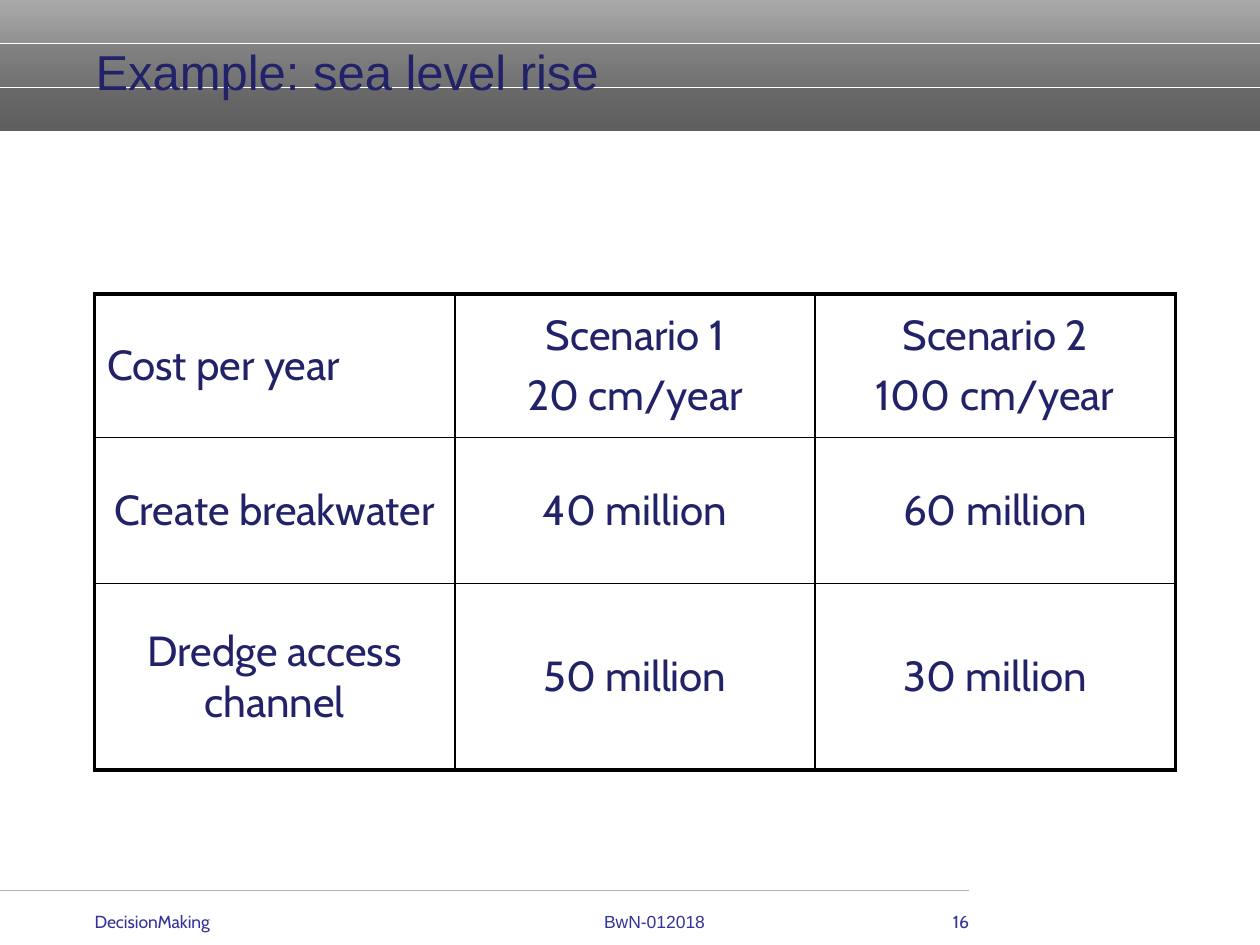
from dataclasses import dataclass

from lxml import etree
from pptx import Presentation
from pptx.dml.color import RGBColor
from pptx.enum.shapes import MSO_CONNECTOR, MSO_SHAPE
from pptx.enum.text import MSO_ANCHOR, MSO_AUTO_SIZE, PP_ALIGN
from pptx.oxml.ns import qn
from pptx.util import Pt

LEFT, CENTER, RIGHT = PP_ALIGN.LEFT, PP_ALIGN.CENTER, PP_ALIGN.RIGHT
TOP, MIDDLE = MSO_ANCHOR.TOP, MSO_ANCHOR.MIDDLE
RECTANGLE, STRAIGHT = MSO_SHAPE.RECTANGLE, MSO_CONNECTOR.STRAIGHT
NO_AUTOFIT = MSO_AUTO_SIZE.NONE


@dataclass(frozen=True)
class Theme:
    ink: str = "222268"
    footer: str = "333399"
    light_gray: str = "B2B2B2"
    dark_gray: str = "5F5F5F"
    white: str = "FFFFFF"
    border: str = "000000"
    heading_font: str = "Arial"
    body_font: str = "Cabin"
    title_size: float = 28
    table_size: float = 24
    footer_size: float = 10
    thin: float = 1
    thick: float = 2.25


@dataclass(frozen=True)
class Box:
    left: float
    top: float
    width: float
    height: float

    def lengths(self) -> tuple:
        return tuple(Pt(v) for v in (self.left, self.top, self.width, self.height))


@dataclass(frozen=True)
class FooterItem:
    text: str
    box: Box
    alignment: PP_ALIGN
    font: str


THEME = Theme()
SLIDE_WIDTH, SLIDE_HEIGHT = 720, 540
HEADER_HEIGHT = 75
STRIPE_HEIGHT = HEADER_HEIGHT / 3
STRIPE_OPACITIES = (10, 35, 60)
TITLE_BOX = Box(54.6, 18.7, 645, 48.2)
TABLE_BOX = Box(54, 167.9, 617.7, 272.2)
ROW_HEIGHTS = (82, 83.5, 106.7)
ROWS = (
    ("Cost per year", "Scenario 1\n20 cm/year", "Scenario 2\n100 cm/year"),
    ("Create breakwater", "40 million", "60 million"),
    ("Dredge access channel", "50 million", "30 million"),
)
FOOTER_RULE_TOP, FOOTER_RULE_WIDTH = 509, 553.7
FOOTER_TOP, FOOTER_HEIGHT = 520.6, 25.2
FOOTER_ITEMS = (
    FooterItem("16", Box(517, FOOTER_TOP, 36.7, FOOTER_HEIGHT), RIGHT, THEME.body_font),
    FooterItem("DecisionMaking", Box(54, FOOTER_TOP, 192, FOOTER_HEIGHT), LEFT, THEME.body_font),
    FooterItem("BwN-012018", Box(317.5, FOOTER_TOP, 113, FOOTER_HEIGHT), CENTER, THEME.heading_font),
)


def rgb(color: str) -> RGBColor:
    return RGBColor.from_string(color)


def set_attributes(target, values: dict) -> None:
    for name, value in values.items():
        setattr(target, name, value)


def style_font(font, name: str, size: float, color: str) -> None:
    set_attributes(font, {"name": name, "size": Pt(size), "bold": False})
    font.color.rgb = rgb(color)


def style_frame(frame, anchor: MSO_ANCHOR, vertical_inset: float = 0) -> None:
    set_attributes(frame, {
        "word_wrap": True, "auto_size": NO_AUTOFIT, "vertical_anchor": anchor,
        "margin_left": 0, "margin_right": 0,
        "margin_top": Pt(vertical_inset), "margin_bottom": Pt(vertical_inset),
    })


def add_rectangle(slide, box: Box):
    shape = slide.shapes.add_shape(RECTANGLE, *box.lengths())
    shape.shadow.inherit = False
    shape.line.fill.background()
    return shape


def add_rule(slide, top: float, width: float, color: str) -> None:
    rule = slide.shapes.add_connector(STRAIGHT, 0, Pt(top), Pt(width), Pt(top))
    rule.line.color.rgb = rgb(color)
    rule.line.width = Pt(0.75)
    etree.SubElement(rule.element.spPr, qn("a:effectLst"))


def add_header(slide) -> None:
    """Draw the gradient band, its translucent stripes and the white rules."""
    fill = add_rectangle(slide, Box(0, 0, SLIDE_WIDTH, HEADER_HEIGHT)).fill
    fill.gradient()
    fill.gradient_angle = 270
    for stop, position, color in zip(fill.gradient_stops, (0, 1), (THEME.light_gray, THEME.dark_gray)):
        stop.position = position
        stop.color.rgb = rgb(color)
    for index, opacity in enumerate(STRIPE_OPACITIES):
        stripe = add_rectangle(slide, Box(0, index * STRIPE_HEIGHT, SLIDE_WIDTH, STRIPE_HEIGHT))
        stripe.fill.solid()
        stripe.fill.fore_color.rgb = rgb(THEME.dark_gray)
        color_element = stripe.element.spPr.find(f"{qn('a:solidFill')}/{qn('a:srgbClr')}")
        etree.SubElement(color_element, qn("a:alpha"), val=str(opacity * 1000))
    for index in range(1, len(STRIPE_OPACITIES) + 1):
        add_rule(slide, index * STRIPE_HEIGHT, SLIDE_WIDTH, THEME.white)


def add_title(slide, text: str) -> None:
    title = slide.shapes.title
    set_attributes(title, dict(zip(("left", "top", "width", "height"), TITLE_BOX.lengths())))
    title.element.getparent().append(title.element)  # in front of the header
    style_frame(title.text_frame, MIDDLE, 3.6)
    title.text_frame.text = text
    paragraph = title.text_frame.paragraphs[0]
    set_attributes(paragraph, {"alignment": LEFT, "line_spacing": 0.9})
    style_font(paragraph.font, THEME.heading_font, THEME.title_size, THEME.ink)


def set_borders(cell, widths: dict) -> None:
    properties = cell._tc.get_or_add_tcPr()
    for index, (side, width) in enumerate(widths.items()):
        line = etree.Element(qn(f"a:ln{side}"), w=str(Pt(width)))
        solid = etree.SubElement(line, qn("a:solidFill"))
        etree.SubElement(solid, qn("a:srgbClr"), val=THEME.border)
        properties.insert(index, line)


def add_cost_table(slide) -> None:
    last_row, last_column = len(ROWS) - 1, len(ROWS[0]) - 1
    table = slide.shapes.add_table(len(ROWS), len(ROWS[0]), *TABLE_BOX.lengths()).table
    set_attributes(table, {"first_row": False, "horz_banding": False})
    for column in table.columns:
        column.width = Pt(TABLE_BOX.width / len(ROWS[0]))
    for row_index, (texts, height) in enumerate(zip(ROWS, ROW_HEIGHTS)):
        table.rows[row_index].height = Pt(height)
        for column_index, text in enumerate(texts):
            cell = table.cell(row_index, column_index)
            set_attributes(cell, {"text": text, "vertical_anchor": MIDDLE})
            cell.fill.background()
            outer_sides = {"L": column_index == 0, "R": column_index == last_column,
                           "T": row_index == 0, "B": row_index == last_row}
            set_borders(cell, {side: THEME.thick if outer else THEME.thin
                               for side, outer in outer_sides.items()})
            is_corner = row_index == column_index == 0
            for index, paragraph in enumerate(cell.text_frame.paragraphs):
                paragraph.alignment = LEFT if is_corner else CENTER
                paragraph.space_before = Pt(0.2 * THEME.table_size if index else 0)
                style_font(paragraph.font, THEME.body_font, THEME.table_size, THEME.ink)


def add_footer_item(slide, item: FooterItem) -> None:
    frame = slide.shapes.add_textbox(*item.box.lengths()).text_frame
    style_frame(frame, TOP)
    frame.text = item.text
    paragraph = frame.paragraphs[0]
    paragraph.alignment = item.alignment
    style_font(paragraph.font, item.font, THEME.footer_size, THEME.footer)


def main() -> None:
    presentation = Presentation()
    set_attributes(presentation, {"slide_width": Pt(SLIDE_WIDTH), "slide_height": Pt(SLIDE_HEIGHT)})
    slide = presentation.slides.add_slide(presentation.slide_layouts.get_by_name("Title Only"))
    add_header(slide)
    add_rule(slide, FOOTER_RULE_TOP, FOOTER_RULE_WIDTH, THEME.light_gray)
    add_title(slide, "Example: sea level rise")
    add_cost_table(slide)
    for item in FOOTER_ITEMS:
        add_footer_item(slide, item)
    presentation.save("out.pptx")


if __name__ == "__main__":
    main()
